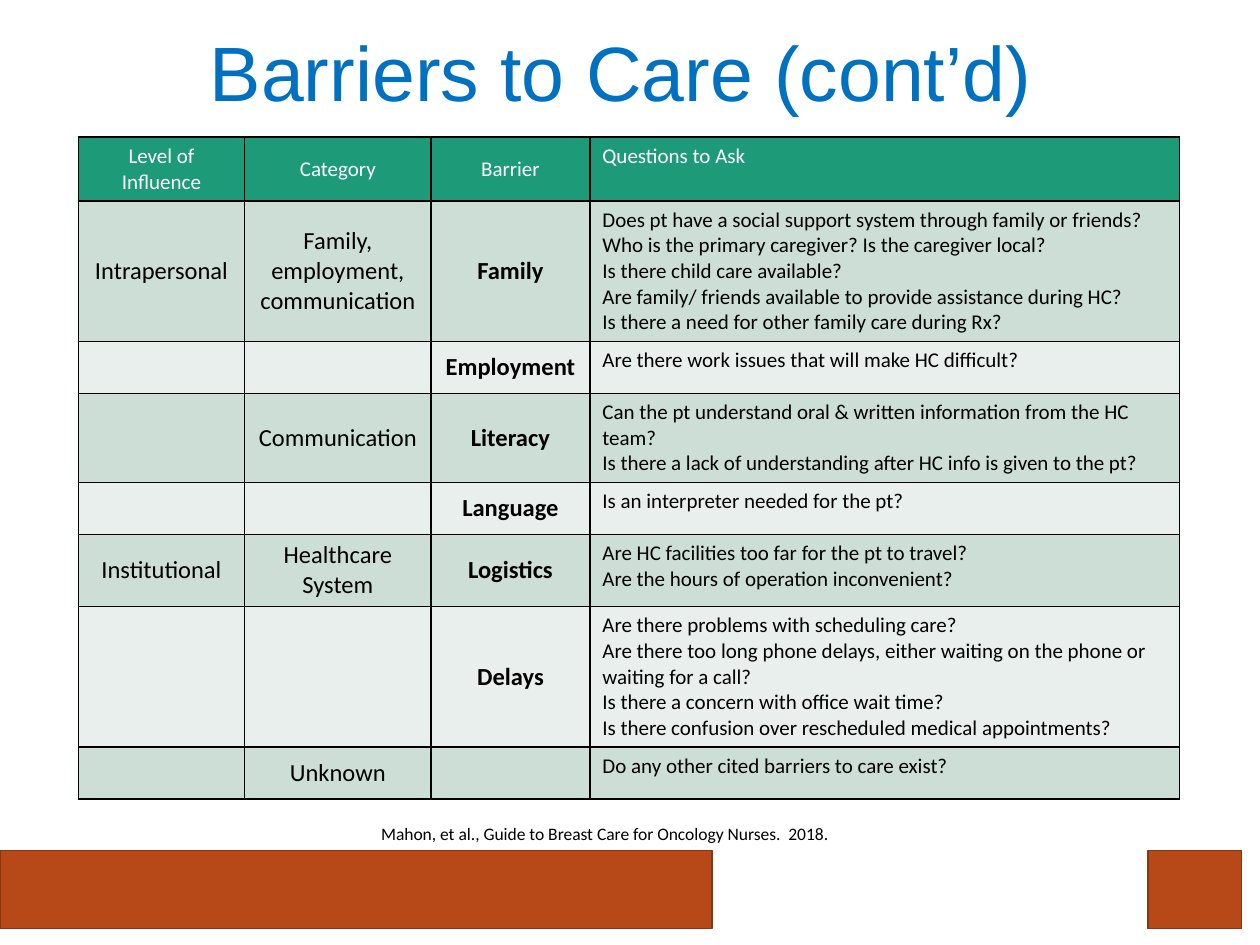
from lxml import etree
from pptx import Presentation
from pptx.dml.color import RGBColor
from pptx.enum.shapes import MSO_SHAPE
from pptx.enum.text import MSO_ANCHOR, PP_ALIGN
from pptx.oxml.ns import qn
from pptx.util import Pt

RECT = MSO_SHAPE.RECTANGLE
MIDDLE, TOP = MSO_ANCHOR.MIDDLE, MSO_ANCHOR.TOP
CENTER, LEFT = PP_ALIGN.CENTER, PP_ALIGN.LEFT

COLORS = {
    "title": "0070C0", "head": "1D9A78", "dark": "CDDED6", "light": "E8EFEC",
    "bar": "B74919", "edge": "873612", "ink": "000000", "white": "FFFFFF",
}
TITLE = "Barriers to Care (cont’d)"
SOURCE = "Mahon, et al., Guide to Breast Care for Oncology Nurses.  2018."
HEAD = ("Level of Influence", "Category", "Barrier", ["Questions to Ask"])
ROWS = [
    ("Intrapersonal", "Family, employment, communication", "Family", [
        "Does pt have a social support system through family or friends?",
        "Who is the primary caregiver? Is the caregiver local?",
        "Is there child care available?",
        "Are family/ friends available to provide assistance during HC?",
        "Is there a need for other family care during Rx?"]),
    ("", "", "Employment", ["Are there work issues that will make HC difficult?"]),
    ("", "Communication", "Literacy", [
        "Can the pt understand oral & written information from the HC team?",
        "Is there a lack of understanding after HC info is given to the pt?"]),
    ("", "", "Language", ["Is an interpreter needed for the pt?"]),
    ("Institutional", "Healthcare System", "Logistics", [
        "Are HC facilities too far for the pt to travel?",
        "Are the hours of operation inconvenient?"]),
    ("", "", "Delays", [
        "Are there problems with scheduling care?",
        "Are there too long phone delays, either waiting on the phone or waiting for a call?",
        "Is there a concern with office wait time?",
        "Is there confusion over rescheduled medical appointments?"]),
    ("", "Unknown", "", ["Do any other cited barriers to care exist?"]),
]
WIDTHS = (95, 106.6, 90.7, 337)
HEIGHT = 29.5
BARS = [(0, 407), (656, 53.5)]


def color(name):
    return RGBColor.from_string(COLORS[name])


def write(frame, lines, size, ink, align, face="Calibri", bold=False):
    frame.text = "\n".join(lines)
    for para in frame.paragraphs:
        para.alignment = align
        font = para.font
        font.name, font.size, font.bold = face, Pt(size), bold
        font.color.rgb = color(ink)


def border(cell):
    props = cell._tc.get_or_add_tcPr()
    for side in ("lnL", "lnR", "lnT", "lnB"):
        line = etree.SubElement(props, qn("a:" + side), w=str(Pt(1)))
        fill = etree.SubElement(line, qn("a:solidFill"))
        etree.SubElement(fill, qn("a:srgbClr"), val=COLORS["ink"])


def add_bars(slide):
    for left, width in BARS:
        bar = slide.shapes.add_shape(RECT, Pt(left), Pt(486), Pt(width), Pt(44.6))
        bar.shadow.inherit = False
        bar.fill.solid()
        bar.fill.fore_color.rgb = color("bar")
        bar.line.color.rgb = color("edge")
        bar.line.width = Pt(1)


def add_title(slide):
    title = slide.shapes.title
    title.left, title.top = Pt(44.6), Pt(-8.6)
    title.width, title.height = Pt(620.6), Pt(104.4)
    write(title.text_frame, [TITLE], 44, "title", CENTER, "Arial")
    title.text_frame.vertical_anchor = MIDDLE
    title.text_frame.paragraphs[0].line_spacing = 0.9


def add_grid(slide):
    rows = [HEAD] + ROWS
    grid = slide.shapes.add_table(
        len(rows), len(WIDTHS), Pt(44.8), Pt(78.4),
        Pt(sum(WIDTHS)), Pt(HEIGHT * len(rows))).table
    for col, width in zip(grid.columns, WIDTHS):
        col.width = Pt(width)
    for r, row in enumerate(rows):
        grid.rows[r].height = Pt(HEIGHT)
        back = "head" if r == 0 else "dark" if r % 2 else "light"
        for c, text in enumerate(row):
            cell = grid.cell(r, c)
            border(cell)
            cell.fill.solid()
            cell.fill.fore_color.rgb = color(back)
            if not text:
                continue
            asks = c == 3
            cell.vertical_anchor = TOP if asks else MIDDLE
            write(cell.text_frame, text if asks else [text],
                  12 if asks or r == 0 else 14,
                  "ink" if r else "white",
                  LEFT if asks else CENTER, bold=r > 0 and c == 2)


def add_source(slide):
    box = slide.shapes.add_textbox(Pt(133), Pt(466.6), Pt(425), Pt(19.4))
    box.text_frame.word_wrap = True
    write(box.text_frame, [SOURCE], 10, "ink", CENTER)


def main():
    """Build the slide on barriers to care."""
    deck = Presentation()
    deck.slide_width, deck.slide_height = Pt(720), Pt(540)
    slide = deck.slides.add_slide(deck.slide_layouts[5])
    add_bars(slide)
    add_title(slide)
    add_grid(slide)
    add_source(slide)
    deck.save("out.pptx")


if __name__ == "__main__":
    main()
